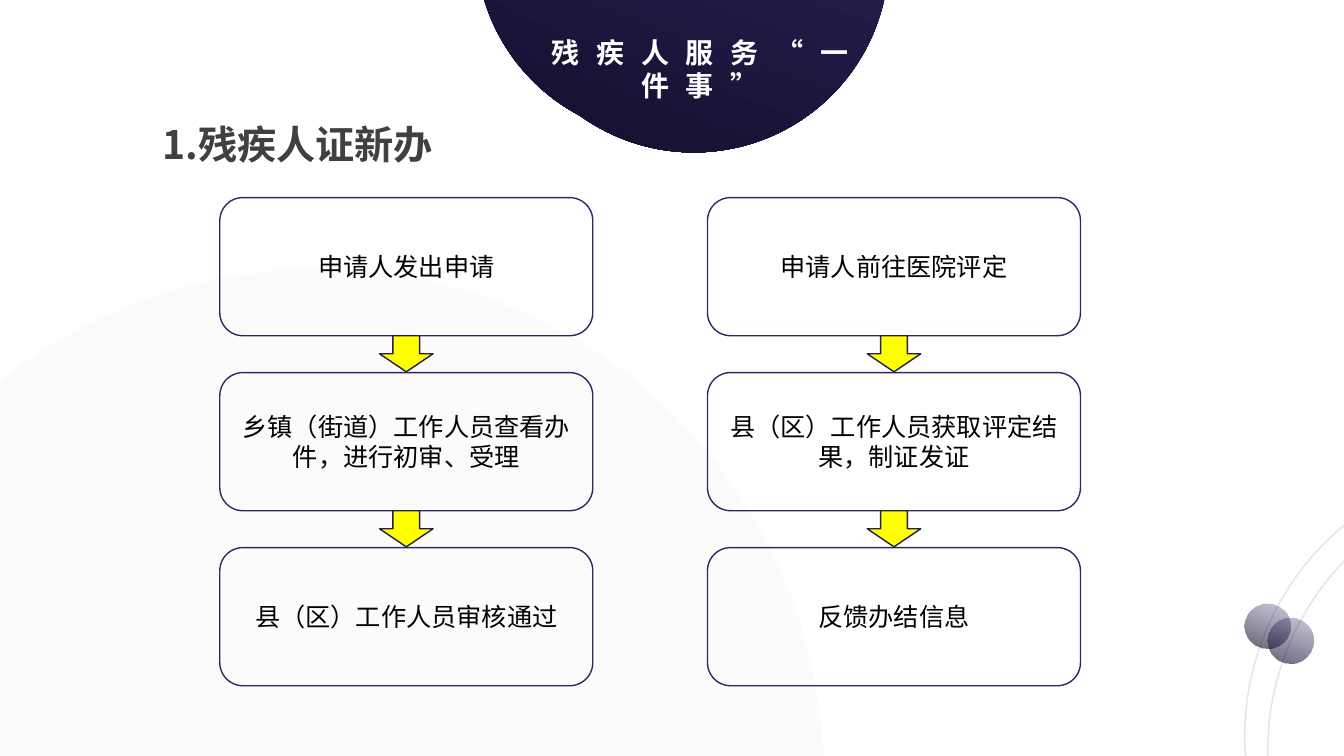
from dataclasses import dataclass

from lxml import etree
from pptx import Presentation
from pptx.dml.color import RGBColor
from pptx.enum.shapes import MSO_SHAPE
from pptx.enum.text import MSO_ANCHOR, MSO_AUTO_SIZE, PP_ALIGN
from pptx.oxml.ns import qn
from pptx.util import Cm, Pt

ELLIPSE = MSO_SHAPE.OVAL
STEP_BOX = MSO_SHAPE.FLOWCHART_ALTERNATE_PROCESS
DOWN_ARROW = MSO_SHAPE.DOWN_ARROW
LEFT, CENTER = PP_ALIGN.LEFT, PP_ALIGN.CENTER
TOP, MIDDLE = MSO_ANCHOR.TOP, MSO_ANCHOR.MIDDLE
NO_AUTOFIT = MSO_AUTO_SIZE.NONE

FONT = "Noto Sans CJK SC"
LINE_PITCH = 1.2
COLORS = {
    "indigo": "2E2961",
    "midnight": "120F2D",
    "arrow_line": "221F49",
    "arrow": "FFFF00",
    "ring": "A6A6A6",
    "backdrop": "F2F2F2",
    "heading": "404040",
    "text": "000000",
    "white": "FFFFFF",
}


@dataclass
class Circle:
    left: float
    top: float
    size: float
    fill: tuple[str, ...] = ()
    line: str = ""
    alphas: tuple[int, ...] = ()


@dataclass
class TextStyle:
    size: int
    color: str
    bold: bool = False
    align: PP_ALIGN = CENTER
    anchor: MSO_ANCHOR = TOP
    wrap: bool = True
    spacing: int = 0


BACKDROP = Circle(-4.72, 6.78, 25.48, ("backdrop",), alphas=(29,))
ORNAMENTS = [
    Circle(11.99, -6.35, 9.83, ("indigo", "midnight")),
    Circle(31.37, 11.66, 13.79, line="ring", alphas=(30,)),
    Circle(31.37, 15.21, 1.14, ("indigo", "midnight"), alphas=(26, 65)),
]
ORNAMENT_SHIFTS = [(0, 0), (0.58, 0.36)]

BANNER_STYLE = TextStyle(20, "white", bold=True, wrap=False, spacing=12)
HEADING_STYLE = TextStyle(28, "heading", bold=True, align=LEFT)
STEP_STYLE = TextStyle(18, "text", anchor=MIDDLE)

FLOWS = [
    ["申请人发出申请", "乡镇（街道）工作人员查看办件，进行初审、受理", "县（区）工作人员审核通过"],
    ["申请人前往医院评定", "县（区）工作人员获取评定结果，制证发证", "反馈办结信息"],
]
STEP_LEFT, STEP_TOP = 5.54, 4.98
STEP_WIDTH, STEP_HEIGHT = 9.4, 3.48
COLUMN_PITCH, ROW_PITCH = 12.29, 4.41
ARROW_WIDTH, ARROW_HEIGHT = 1.35, 0.91


def rgb(name: str) -> RGBColor:
    return RGBColor.from_string(COLORS[name])


def add_shape(s, kind, box: tuple, fill: tuple = (), line: str = ""):
    """Add a shape with no fill, a solid fill or a two-colour gradient."""
    sp = s.shapes.add_shape(kind, *map(Cm, box))
    sp.shadow.inherit = False
    if len(fill) == 2:
        sp.fill.gradient()
        sp.fill.gradient_angle = 250
        for stop, name in zip(sp.fill.gradient_stops, fill):
            stop.color.rgb = rgb(name)
    elif fill:
        sp.fill.solid()
        sp.fill.fore_color.rgb = rgb(fill[0])
    else:
        sp.fill.background()
    if line:
        sp.line.color.rgb = rgb(line)
        sp.line.width = Pt(1)
    else:
        sp.line.fill.background()
    return sp


def add_circle(s, circle: Circle, dx: float = 0, dy: float = 0) -> None:
    box = (circle.left + dx, circle.top + dy, circle.size, circle.size)
    sp = add_shape(s, ELLIPSE, box, circle.fill, circle.line)
    colors = sp._element.spPr.iter(qn("a:srgbClr"))
    for color, alpha in zip(colors, circle.alphas):
        etree.SubElement(color, qn("a:alpha"), val=str(alpha * 1000))


def write_text(sp, lines: list[str], style: TextStyle) -> None:
    tf = sp.text_frame
    frame_format = {
        "auto_size": NO_AUTOFIT,
        "word_wrap": style.wrap,
        "vertical_anchor": style.anchor,
    }
    for name, value in frame_format.items():
        setattr(tf, name, value)
    tf.text = "\n".join(lines)
    font_format = {"name": FONT, "size": Pt(style.size), "bold": style.bold}
    for p in tf.paragraphs:
        p.alignment = style.align
        p.line_spacing = Pt(style.size * LINE_PITCH)
        for r in p.runs:
            for name, value in font_format.items():
                setattr(r.font, name, value)
            r.font.color.rgb = rgb(style.color)
            rPr = r._r.get_or_add_rPr()
            etree.SubElement(rPr, qn("a:ea"), typeface=FONT)
            if style.spacing:
                rPr.set("spc", str(style.spacing * 100))


def add_heading(s) -> None:
    sp = s.shapes.title
    place = {"left": 3.84, "top": 2.9, "width": 26.16, "height": 2.46}
    for name, value in place.items():
        setattr(sp, name, Cm(value))
    write_text(sp, ["1.残疾人证新办"], HEADING_STYLE)


def add_banner_text(s) -> None:
    sp = s.shapes.add_textbox(Cm(12.09), Cm(0.89), Cm(11.1), Cm(1.3))
    for side in ("left", "top", "right", "bottom"):
        setattr(sp.text_frame, f"margin_{side}", 0)
    write_text(sp, ["残疾人服务“一", "件事”"], BANNER_STYLE)


def add_flow(s, left: float, steps: list[str]) -> None:
    """Stack the steps of one column, with an arrow below all but the last."""
    for row, step in enumerate(steps):
        top = STEP_TOP + row * ROW_PITCH
        box = (left, top, STEP_WIDTH, STEP_HEIGHT)
        write_text(add_shape(s, STEP_BOX, box, line="indigo"), [step], STEP_STYLE)
        if row < len(steps) - 1:
            arrow_left = left + (STEP_WIDTH - ARROW_WIDTH) / 2
            arrow_box = (arrow_left, top + STEP_HEIGHT, ARROW_WIDTH, ARROW_HEIGHT)
            add_shape(s, DOWN_ARROW, arrow_box, ("arrow",), "arrow_line")


def main() -> None:
    prs = Presentation()
    prs.slide_width, prs.slide_height = Cm(33.87), Cm(19.05)
    s = prs.slides.add_slide(prs.slide_layouts.get_by_name("Title Only"))
    s.background.fill.solid()
    s.background.fill.fore_color.rgb = rgb("white")
    add_heading(s)
    add_circle(s, BACKDROP)
    for dx, dy in ORNAMENT_SHIFTS:
        for circle in ORNAMENTS:
            add_circle(s, circle, dx, dy)
    add_banner_text(s)
    for column, steps in enumerate(FLOWS):
        add_flow(s, STEP_LEFT + column * COLUMN_PITCH, steps)
    prs.save("out.pptx")


if __name__ == "__main__":
    main()
